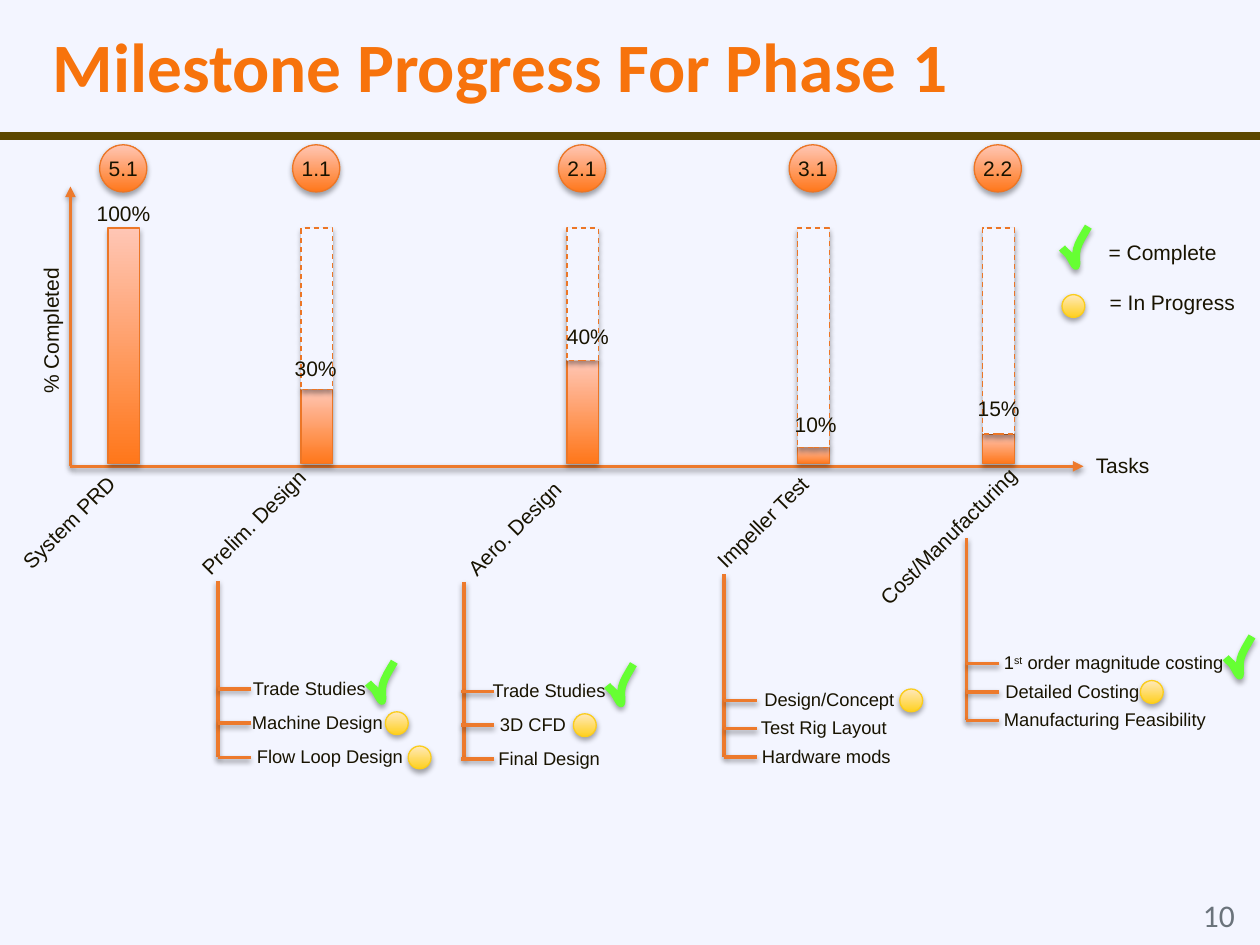
from collections import namedtuple

from lxml import etree
from pptx import Presentation
from pptx.dml.color import RGBColor
from pptx.enum.dml import MSO_LINE
from pptx.enum.shapes import MSO_CONNECTOR, MSO_SHAPE
from pptx.enum.text import MSO_ANCHOR, MSO_AUTO_SIZE, PP_ALIGN
from pptx.oxml.ns import qn
from pptx.util import Cm, Pt

COLORS = {
    "background": "F3F5FF", "title": "F7730C", "text": "181300", "number": "6A737B",
    "band": "5C4700", "axis": "ED7A2C", "bar_line": "EC7626", "bar_dark": "FF771A",
    "bar_light": "FFC6B5", "dot_line": "FBCD1C", "dot_dark": "FFD01E",
    "dot_light": "FFE9BB", "check": "66FF33", "shadow": "000000",
}
BAR_TOP, BAR_BASE, BAR_WIDTH = 4.6, 9.35, 0.64
BADGE_TOP, BADGE_SIZE = 2.92, 0.95
DOT_SIZE = 0.46
TICK_LENGTH = 0.66
AXIS_LEFT, AXIS_BASE = 1.42, 9.4

# Start point, then three control points for each curve of the check mark
CHECK_START = (0, 0.43)
CHECK_CURVES = [
    ((0.03, 0.47), (0.08, 0.51), (0.13, 0.56)),
    ((0.18, 0.63), (0.25, 0.79), (0.28, 0.79)),
    ((0.31, 0.76), (0.26, 0.58), (0.3, 0.45)),
    ((0.33, 0.33), (0.43, 0.17), (0.53, 0)),
]

# label and name hold left, top and width of their text
Milestone = namedtuple("Milestone", "number left done percent label name name_place")
MILESTONES = [
    Milestone("5.1", 2.18, 4.75, "100%", (1.7, 3.91, 1.6), "System PRD", (-0.08, 10.13, 2.95)),
    Milestone("1.1", 6.07, 1.5, "30%", (5.69, 7.04, 1.37), "Prelim. Design", (3.48, 10.13, 3.28)),
    Milestone("2.1", 11.43, 2.08, "40%", (11.18, 6.4, 1.37), "Aero. Design", (8.89, 10.26, 2.97)),
    Milestone("3.1", 16.08, 0.33, "10%", (15.77, 8.18, 1.37), "Impeller Test", (13.92, 10.13, 2.92)),
    Milestone("2.2", 19.81, 0.6, "15%", (19.46, 7.85, 1.37), "Cost/Manufacturing", (17.02, 10.41, 4.22)),
]

# Each item: text, left, width, mark, left of mark
Branch = namedtuple("Branch", "x tick_x top first gap items")
BRANCHES = [
    Branch(4.39, 4.39, 11.71, 13.89, 0.69, [
        ("Trade Studies", 4.85, 2.95, "check", 7.42),
        ("Machine Design", 4.83, 3.33, "dot", 7.77),
        ("Flow Loop Design", 4.93, 3.66, "dot", 8.23)]),
    Branch(9.35, 9.3, 11.73, 13.94, 0.68, [
        ("Trade Studies", 9.68, 2.95, "check", 12.24),
        ("3D CFD", 9.83, 1.93, "dot", 11.56),
        ("Final Design", 9.8, 2.69, None, None)]),
    Branch(14.6, 14.6, 11.58, 14.12, 0.57, [
        ("Design/Concept", 15.16, 3.18, "dot", 18.14),
        ("Test Rig Layout", 15.09, 3.12, None, None),
        ("Hardware mods", 15.11, 3.18, None, None)]),
    Branch(19.48, 19.48, 10.85, 13.38, 0.57, [
        ("1^st^ order magnitude costing", 19.99, 5.05, "check", 24.71),
        ("Detailed Costing", 20.02, 3.28, "dot", 22.99),
        ("Manufacturing Feasibility", 19.99, 4.67, None, None)]),
]


def color(name):
    return RGBColor.from_string(COLORS[name])


def set_shadow(shape, alpha=35, distance=1.8):
    """Set a soft shadow below the shape, or none when alpha is 0; call after the line is set."""
    effects = etree.SubElement(shape._element.spPr, qn("a:effectLst"))
    if alpha:
        shadow = etree.SubElement(effects, qn("a:outerShdw"), blurRad=str(Pt(3.1)),
                                  dist=str(Pt(distance)), dir="5400000", rotWithShape="0")
        tint = etree.SubElement(shadow, qn("a:srgbClr"), val=COLORS["shadow"])
        etree.SubElement(tint, qn("a:alpha"), val=str(alpha * 1000))


def add_spans(para, text, size, tone="text", font="Arial", bold=False):
    """Add runs; text between carets is raised."""
    for index, part in enumerate(text.split("^")):
        span = para.add_run()
        span.text = part
        span.font.size = Pt(size)
        span.font.name = font
        span.font.bold = bold
        span.font.color.rgb = color(tone)
        if index % 2:
            span._r.get_or_add_rPr().set("baseline", "30000")


def add_label(page, text, left, top, width, size=12, height=0.77, rotation=0, **style):
    box = page.shapes.add_textbox(Cm(left), Cm(top), Cm(width), Cm(height))
    box.rotation = rotation
    box.text_frame.word_wrap = False
    add_spans(box.text_frame.paragraphs[0], text, size, **style)


def add_line(page, start, end, tone="axis", width=2, arrow=False, shadow=38):
    line = page.shapes.add_connector(MSO_CONNECTOR.STRAIGHT, *map(Cm, start + end))
    line.line.color.rgb = color(tone)
    line.line.width = Pt(width)
    if arrow:
        etree.SubElement(line._element.spPr.find(qn("a:ln")), qn("a:tailEnd"), type="triangle")
    set_shadow(line, shadow, 1.6)


def add_solid(page, kind, left, top, width, height, tone="bar", dashed=False):
    """Add a shape with a gradient, or a dashed one in the background colour."""
    shape = page.shapes.add_shape(kind, Cm(left), Cm(top), Cm(width), Cm(height))
    if dashed:
        shape.fill.solid()
        shape.fill.fore_color.rgb = color("background")
        shape.line.dash_style = MSO_LINE.DASH
    else:
        shape.fill.gradient()
        shape.fill.gradient_angle = 90
        for stop, shade in zip(shape.fill.gradient_stops, ("dark", "light")):
            stop.color.rgb = color(f"{tone}_{shade}")
    shape.line.color.rgb = color(f"{tone}_line")
    shape.line.width = Pt(0.75)
    set_shadow(shape)
    return shape


def add_dot(page, left, middle):
    add_solid(page, MSO_SHAPE.OVAL, left, middle - DOT_SIZE / 2, DOT_SIZE, DOT_SIZE, "dot")


def add_check(page, left, middle):
    top = middle - 0.55
    points, start = [], CHECK_START
    for curve in CHECK_CURVES:
        for t in (0.25, 0.5, 0.75, 1):
            weights = ((1 - t) ** 3, 3 * t * (1 - t) ** 2, 3 * t ** 2 * (1 - t), t ** 3)
            x, y = (sum(w * v for w, v in zip(weights, axis)) for axis in zip(start, *curve))
            points.append((Cm(left + x), Cm(top + y)))
        start = curve[-1]
    builder = page.shapes.build_freeform(Cm(left + CHECK_START[0]), Cm(top + CHECK_START[1]))
    builder.add_line_segments(points, close=False)
    check = builder.convert_to_shape()
    check.fill.background()
    check.line.color.rgb = color("check")
    check.line.width = Pt(4.5)
    set_shadow(check)


MARKS = {"dot": add_dot, "check": add_check}


def add_badge(page, number, left):
    badge = add_solid(page, MSO_SHAPE.OVAL, left, BADGE_TOP, BADGE_SIZE, BADGE_SIZE)
    frame = badge.text_frame
    frame.word_wrap = False
    frame.vertical_anchor = MSO_ANCHOR.MIDDLE
    frame.margin_left = frame.margin_right = frame.margin_top = frame.margin_bottom = 0
    frame.paragraphs[0].alignment = PP_ALIGN.CENTER
    add_spans(frame.paragraphs[0], number, 12)


def add_milestone(page, item):
    done_top = BAR_BASE - item.done
    add_solid(page, MSO_SHAPE.RECTANGLE, item.left, done_top, BAR_WIDTH, item.done)
    if done_top > BAR_TOP:
        add_solid(page, MSO_SHAPE.RECTANGLE, item.left, BAR_TOP, BAR_WIDTH,
                  done_top - BAR_TOP, dashed=True)
    add_badge(page, item.number, item.left - 0.17)
    add_label(page, item.percent, *item.label)
    add_label(page, item.name, *item.name_place, rotation=315)


def add_branch(page, branch):
    bottom = branch.first + branch.gap * (len(branch.items) - 1)
    add_line(page, (branch.x, branch.top), (branch.x, bottom))
    for index, (text, left, width, mark, mark_left) in enumerate(branch.items):
        middle = branch.first + index * branch.gap
        add_line(page, (branch.tick_x, middle), (branch.tick_x + TICK_LENGTH, middle))
        add_label(page, text, left, middle - 0.37, width, size=10.5, height=0.73)
        if mark:
            MARKS[mark](page, mark_left, middle)


def add_title(page, text):
    title = page.shapes.title
    title.left, title.top, title.width, title.height = map(Cm, (0.81, 0.51, 22.86, 1.6))
    frame = title.text_frame
    frame.auto_size = MSO_AUTO_SIZE.NONE
    frame.vertical_anchor = MSO_ANCHOR.MIDDLE
    frame.paragraphs[0].alignment = PP_ALIGN.LEFT
    add_spans(frame.paragraphs[0], text, 39.6, "title", "Calibri", bold=True)


def main():
    deck = Presentation()
    deck.slide_width, deck.slide_height = Cm(25.4), Cm(19.05)
    page = deck.slides.add_slide(deck.slide_layouts[5])
    page.background.fill.solid()
    page.background.fill.fore_color.rgb = color("background")

    add_title(page, "Milestone Progress For Phase 1")
    add_line(page, (0, 2.74), (25.4, 2.74), "band", 4.5, shadow=0)
    add_label(page, "10", 24, 17.93, 1.4, size=18, height=1.07, tone="number", font="Calibri")

    for tip in ((AXIS_LEFT, 3.76), (21.84, AXIS_BASE)):
        add_line(page, (AXIS_LEFT, AXIS_BASE), tip, arrow=True)
    add_label(page, "% Completed", -0.51, 6.27, 3.07, rotation=270)
    add_label(page, "Tasks", 21.84, 8.99, 1.6)

    for item in MILESTONES:
        add_milestone(page, item)
    for branch in BRANCHES:
        add_branch(page, branch)

    add_check(page, 21.41, 5.12)
    add_label(page, "= Complete", 22.1, 4.7, 2.69)
    add_dot(page, 21.41, 6.17)
    add_label(page, "= In Progress", 22.12, 5.72, 3.07)
    deck.save("out.pptx")


if __name__ == "__main__":
    main()
